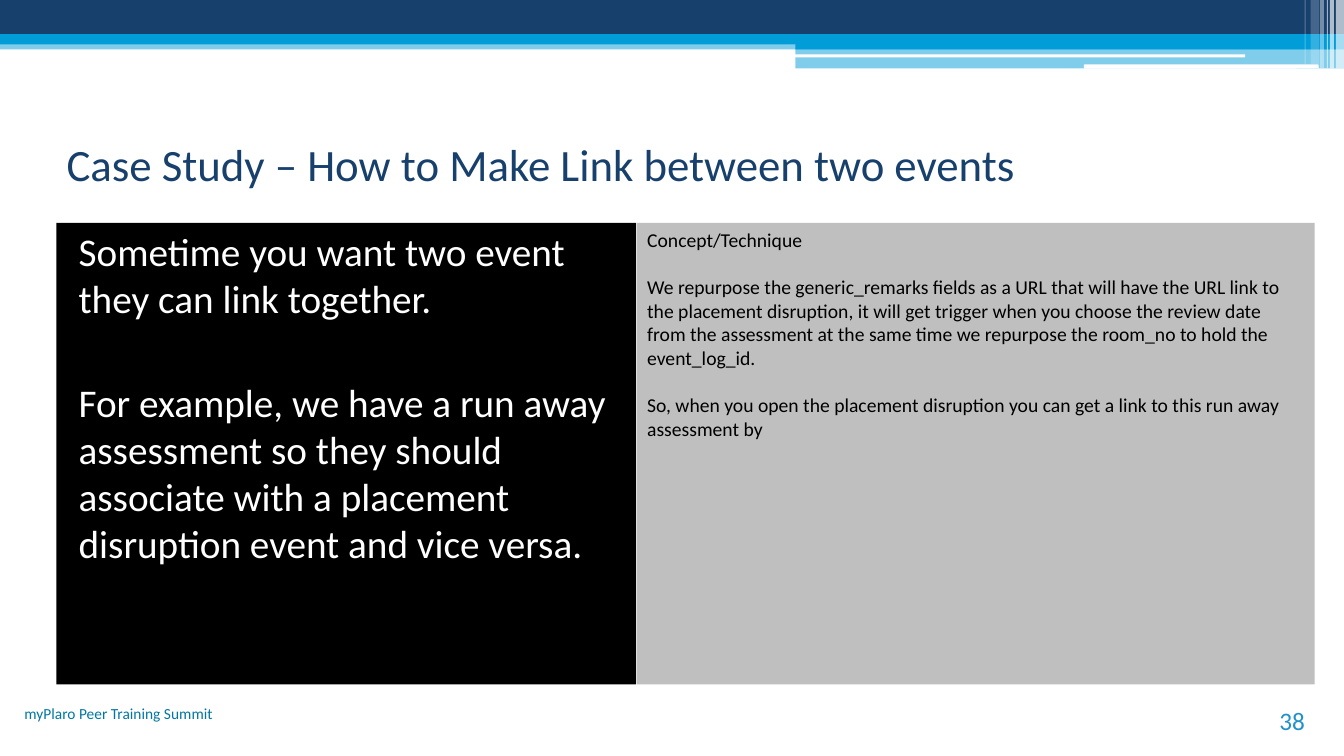
from lxml import etree
from pptx import Presentation
from pptx.dml.color import RGBColor
from pptx.enum.shapes import MSO_SHAPE
from pptx.enum.text import MSO_ANCHOR, MSO_AUTO_SIZE, PP_ALIGN
from pptx.oxml.ns import qn
from pptx.util import Inches, Pt

RECTANGLE, ROUNDED = MSO_SHAPE.RECTANGLE, MSO_SHAPE.ROUNDED_RECTANGLE
TOP, MIDDLE, BOTTOM = MSO_ANCHOR.TOP, MSO_ANCHOR.MIDDLE, MSO_ANCHOR.BOTTOM
LEFT, RIGHT = PP_ALIGN.LEFT, PP_ALIGN.RIGHT
NO_AUTOFIT = MSO_AUTO_SIZE.NONE

NAVY = RGBColor(0x17, 0x40, 0x6D)
CYAN = RGBColor(0x00, 0x9D, 0xD9)
FOOTER_BLUE = RGBColor(0x00, 0x76, 0xA3)
NUMBER_BLUE = RGBColor(0x21, 0x91, 0xC9)
WHITE = RGBColor(0xFF, 0xFF, 0xFF)
BLACK = RGBColor(0x00, 0x00, 0x00)
GRAY = RGBColor(0xBF, 0xBF, 0xBF)

BANDS = [
    (0, 0.4, 13.33, 0.09, CYAN, 50),
    (0, 0, 13.33, 0.34, NAVY, 100),
    (0, 0.34, 13.33, 0.1, CYAN, 100),
    (7.89, 0.39, 5.44, 0.1, CYAN, 100),
    (7.89, 0.48, 5.44, 0.2, CYAN, 50),
]
GROOVES = [(7.88, 0.54, 4.47, 0.03), (10.75, 0.64, 2.33, 0.04)]
STRIPES = [
    (13.25, 0.08, 0.68, 65),
    (13.19, 0.04, 0.68, 65),
    (13.16, 0.01, 0.68, 60),
    (13.09, 0.04, 0.68, 40),
    (13, 0.08, 0.64, 20),
    (12.94, 0.01, 0.64, 30),
]
SCENARIO = [
    "Sometime you want two event they can link together.",
    "For example, we have a run away assessment so they should associate "
    "with a placement disruption event and vice versa.",
]
TECHNIQUE = [
    "Concept/Technique",
    "We repurpose the generic_remarks fields as a URL that will have the URL "
    "link to the placement disruption, it will get trigger when you choose "
    "the review date from the assessment at the same time we repurpose the "
    "room_no to hold the event_log_id.",
    "So, when you open the placement disruption you can get a link to this "
    "run away assessment by",
]


class SlideBuilder:
    """Holds the style and the slide, and adds each kind of element."""

    font_name = "Calibri"

    def __init__(self, slide):
        self.slide = slide

    def add_text(self, shape, texts, size, color, align=LEFT, anchor=TOP, gap=0, inset=0.1):
        """Fill a shape with formatted paragraphs."""
        frame = shape.text_frame
        frame.word_wrap = True
        frame.auto_size = NO_AUTOFIT
        frame.vertical_anchor = anchor
        frame.margin_left = Inches(inset)
        frame.margin_right = Inches(0.1)
        frame.margin_top = frame.margin_bottom = Inches(0.05)
        for index, text in enumerate(texts):
            paragraph = frame.add_paragraph() if index else frame.paragraphs[0]
            paragraph.alignment = align
            paragraph.space_before = Pt(gap if index else 0)
            run = paragraph.add_run()
            run.text = text
            run.font.name = self.font_name
            run.font.size = Pt(size)
            run.font.color.rgb = color

    def title(self, left, top, width, height, text, size, color):
        """Place and format the title placeholder."""
        shape = self.slide.shapes.title
        shape.left, shape.top = Inches(left), Inches(top)
        shape.width, shape.height = Inches(width), Inches(height)
        self.add_text(shape, [text], size, color, anchor=MIDDLE)

    def block(self, left, top, width, height, color, opacity=100, kind=RECTANGLE):
        """Add a borderless filled shape."""
        shape = self.slide.shapes.add_shape(
            kind, Inches(left), Inches(top), Inches(width), Inches(height)
        )
        shape.shadow.inherit = False
        shape.line.fill.background()
        shape.fill.solid()
        shape.fill.fore_color.rgb = color
        if opacity < 100:
            fill_color = next(shape.element.iter(qn("a:srgbClr")))
            etree.SubElement(fill_color, qn("a:alpha")).set("val", str(opacity * 1000))
        return shape

    def label(self, left, top, width, height, text, size, color, anchor=TOP):
        """Add a right-aligned text box."""
        box = self.slide.shapes.add_textbox(
            Inches(left), Inches(top), Inches(width), Inches(height)
        )
        self.add_text(box, [text], size, color, align=RIGHT, anchor=anchor)


def main():
    """Build and save the slide."""
    presentation = Presentation()
    presentation.slide_width = Inches(13.33)
    presentation.slide_height = Inches(7.5)
    title_only = presentation.slide_layouts[5]
    builder = SlideBuilder(presentation.slides.add_slide(title_only))

    for band in BANDS:
        builder.block(*band)
    for groove in GROOVES:
        builder.block(*groove, WHITE, kind=ROUNDED)
    for left, width, height, opacity in STRIPES:
        builder.block(left, 0, width, height, WHITE, opacity)

    builder.title(0.56, 1.04, 11.83, 1.17,
                  "Case Study – How to Make Link between two events", 32, NAVY)
    scenario_panel = builder.block(0.56, 2.21, 5.75, 4.58, BLACK)
    builder.add_text(scenario_panel, SCENARIO, 28, WHITE, gap=40, inset=0.22)
    builder.label(0, 6.94, 2.21, 0.5, "myPlaro Peer Training Summit", 11, FOOTER_BLUE)
    builder.label(11.93, 6.95, 1.11, 0.4, "38", 18, NUMBER_BLUE, BOTTOM)
    technique_panel = builder.block(6.32, 2.21, 6.72, 4.58, GRAY)
    builder.add_text(technique_panel, TECHNIQUE, 14, BLACK, gap=17)

    presentation.save("out.pptx")


if __name__ == "__main__":
    main()
